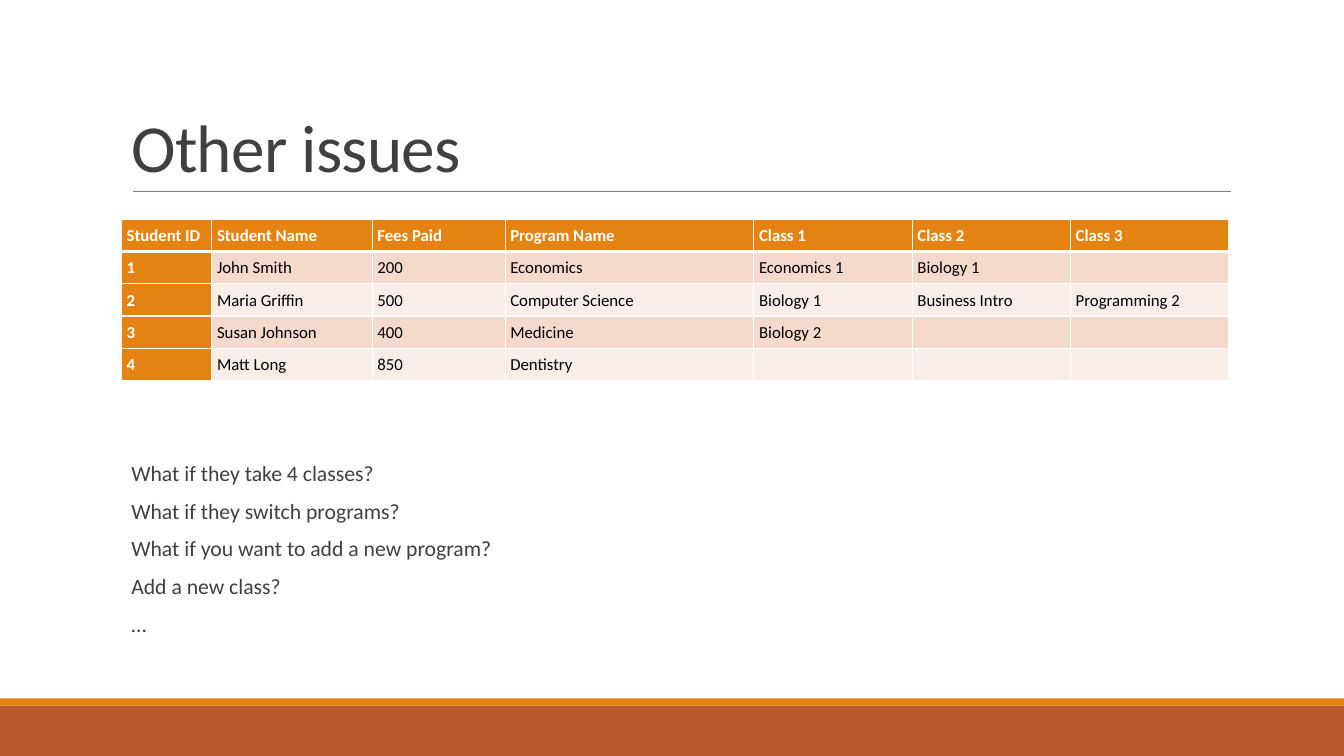
from dataclasses import dataclass

from lxml import etree
from pptx import Presentation
from pptx.dml.color import RGBColor
from pptx.enum.shapes import MSO_CONNECTOR, MSO_SHAPE
from pptx.enum.text import MSO_ANCHOR, MSO_AUTO_SIZE, PP_ALIGN
from pptx.oxml.ns import qn
from pptx.util import Cm, Pt

RECTANGLE = MSO_SHAPE.RECTANGLE
STRAIGHT = MSO_CONNECTOR.STRAIGHT
TOP, MIDDLE, BOTTOM = MSO_ANCHOR.TOP, MSO_ANCHOR.MIDDLE, MSO_ANCHOR.BOTTOM
LEFT = PP_ALIGN.LEFT
NO_AUTOFIT = MSO_AUTO_SIZE.NONE
TITLE_ONLY_LAYOUT = 5


@dataclass(frozen=True)
class Theme:
    font: str = "Calibri"
    text: str = "404040"
    cell_text: str = "000000"
    white: str = "FFFFFF"
    rule: str = "808080"
    orange: str = "E48312"
    rust: str = "BD582C"
    bands: tuple = ("F5D9CC", "FAEDE7")
    title_size: float = 48
    body_size: float = 15.5
    table_size: float = 12


THEME = Theme()
SLIDE_WIDTH, SLIDE_HEIGHT = 33.87, 19.05
COLUMN_WIDTHS = [2.28, 4.04, 3.35, 6.27, 3.99, 3.99, 3.99]
STUDENTS = [
    ["Student ID", "Student Name", "Fees Paid", "Program Name", "Class 1", "Class 2", "Class 3"],
    ["1", "John Smith", "200", "Economics", "Economics 1", "Biology 1", ""],
    ["2", "Maria Griffin", "500", "Computer Science", "Biology 1", "Business Intro", "Programming 2"],
    ["3", "Susan Johnson", "400", "Medicine", "Biology 2", "", ""],
    ["4", "Matt Long", "850", "Dentistry", "", "", ""],
]
QUESTIONS = [
    "What if they take 4 classes?",
    "What if they switch programs?",
    "What if you want to add a new program?",
    "Add a new class?",
    "…",
]


def color(value):
    return RGBColor.from_string(value)


def write(paragraph, text, size, fill=THEME.text, bold=False, line=1.0, before=0, after=0, tracking=0):
    paragraph.alignment = LEFT
    paragraph.line_spacing = line
    paragraph.space_before = Pt(before)
    paragraph.space_after = Pt(after)
    if not text:
        ending = etree.SubElement(paragraph._p, qn("a:endParaRPr"))
        ending.set("sz", str(int(size * 100)))
        return
    run = paragraph.add_run()
    run.text = text
    run.font.name = THEME.font
    run.font.size = Pt(size)
    run.font.bold = bold
    run.font.color.rgb = color(fill)
    if tracking:
        run.font._element.set("spc", str(int(tracking * 100)))


def set_frame(frame, anchor, side, edge):
    frame.word_wrap = True
    frame.auto_size = NO_AUTOFIT
    frame.vertical_anchor = anchor
    frame.margin_left = frame.margin_right = Cm(side)
    frame.margin_top = frame.margin_bottom = Cm(edge)


def add_band(slide, left, top, width, height, fill):
    shape = slide.shapes.add_shape(RECTANGLE, Cm(left), Cm(top), Cm(width), Cm(height))
    shape.shadow.inherit = False
    shape.fill.solid()
    shape.fill.fore_color.rgb = color(fill)
    shape.line.fill.background()


def add_footer(slide, left, top, width, height):
    stripe = 0.18
    add_band(slide, left, top + stripe, width, height - stripe, THEME.rust)
    add_band(slide, left, top, width, stripe, THEME.orange)


def add_title(slide, left, top, width, height):
    title = slide.shapes.title
    title.left, title.top, title.width, title.height = Cm(left), Cm(top), Cm(width), Cm(height)
    set_frame(title.text_frame, BOTTOM, 0.25, 0.13)
    write(title.text_frame.paragraphs[0], "Other issues", THEME.title_size, line=0.85, tracking=-0.5)
    rule_top = Cm(top + height + 0.01)
    rule = slide.shapes.add_connector(STRAIGHT, Cm(left + 0.28), rule_top, Cm(left + width + 0.02), rule_top)
    rule.line.color.rgb = color(THEME.rule)
    rule.line.width = Pt(0.5)
    etree.SubElement(rule._element.spPr, qn("a:effectLst"))


def set_borders(cell, top, bottom):
    properties = cell._tc.get_or_add_tcPr()
    widths = {"lnL": 1, "lnR": 1, "lnT": top, "lnB": bottom}
    for index, (side, width) in enumerate(widths.items()):
        line = etree.Element(qn(f"a:{side}"), w=str(Pt(width)))
        fill = etree.SubElement(line, qn("a:solidFill"))
        etree.SubElement(fill, qn("a:srgbClr"), val=THEME.white)
        properties.insert(index, line)


def add_student_table(slide, left, top, width, height):
    frame = slide.shapes.add_table(
        len(STUDENTS), len(COLUMN_WIDTHS), Cm(left), Cm(top), Cm(width), Cm(height)
    )
    table = frame.table
    table.first_col = True
    for column, column_width in zip(table.columns, COLUMN_WIDTHS):
        column.width = Cm(column_width)
    for row_index, student in enumerate(STUDENTS):
        for column_index, text in enumerate(student):
            cell = table.cell(row_index, column_index)
            heading = row_index == 0 or column_index == 0
            cell.fill.solid()
            cell.fill.fore_color.rgb = color(THEME.orange if heading else THEME.bands[(row_index - 1) % 2])
            cell.vertical_anchor = MIDDLE
            cell.margin_left = cell.margin_right = Cm(0.13)
            cell.margin_top = cell.margin_bottom = Cm(0.13)
            set_borders(cell, 3 if row_index == 1 else 1, 3 if row_index == 0 else 1)
            write(
                cell.text_frame.paragraphs[0], text, THEME.table_size,
                fill=THEME.white if heading else THEME.cell_text, bold=heading, line=1.07,
            )


def add_questions(slide, left, top, width, height):
    frame = slide.shapes.add_textbox(Cm(left), Cm(top), Cm(width), Cm(height)).text_frame
    set_frame(frame, TOP, 0.25, 0.13)
    for index, question in enumerate(QUESTIONS):
        paragraph = frame.add_paragraph() if index else frame.paragraphs[0]
        write(paragraph, question, THEME.body_size, line=0.7, before=12, after=2)


def main():
    presentation = Presentation()
    presentation.slide_width = Cm(SLIDE_WIDTH)
    presentation.slide_height = Cm(SLIDE_HEIGHT)
    slide = presentation.slides.add_slide(presentation.slide_layouts[TITLE_ONLY_LAYOUT])
    left, width = 3.06, 27.94
    add_footer(slide, 0, 17.6, SLIDE_WIDTH, SLIDE_HEIGHT - 17.6)
    add_title(slide, left, 0.79, width, 4.03)
    add_questions(slide, left, 11.63, width, 4.67)
    add_student_table(slide, left, 5.52, sum(COLUMN_WIDTHS), 4.07)
    presentation.save("out.pptx")


if __name__ == "__main__":
    main()
